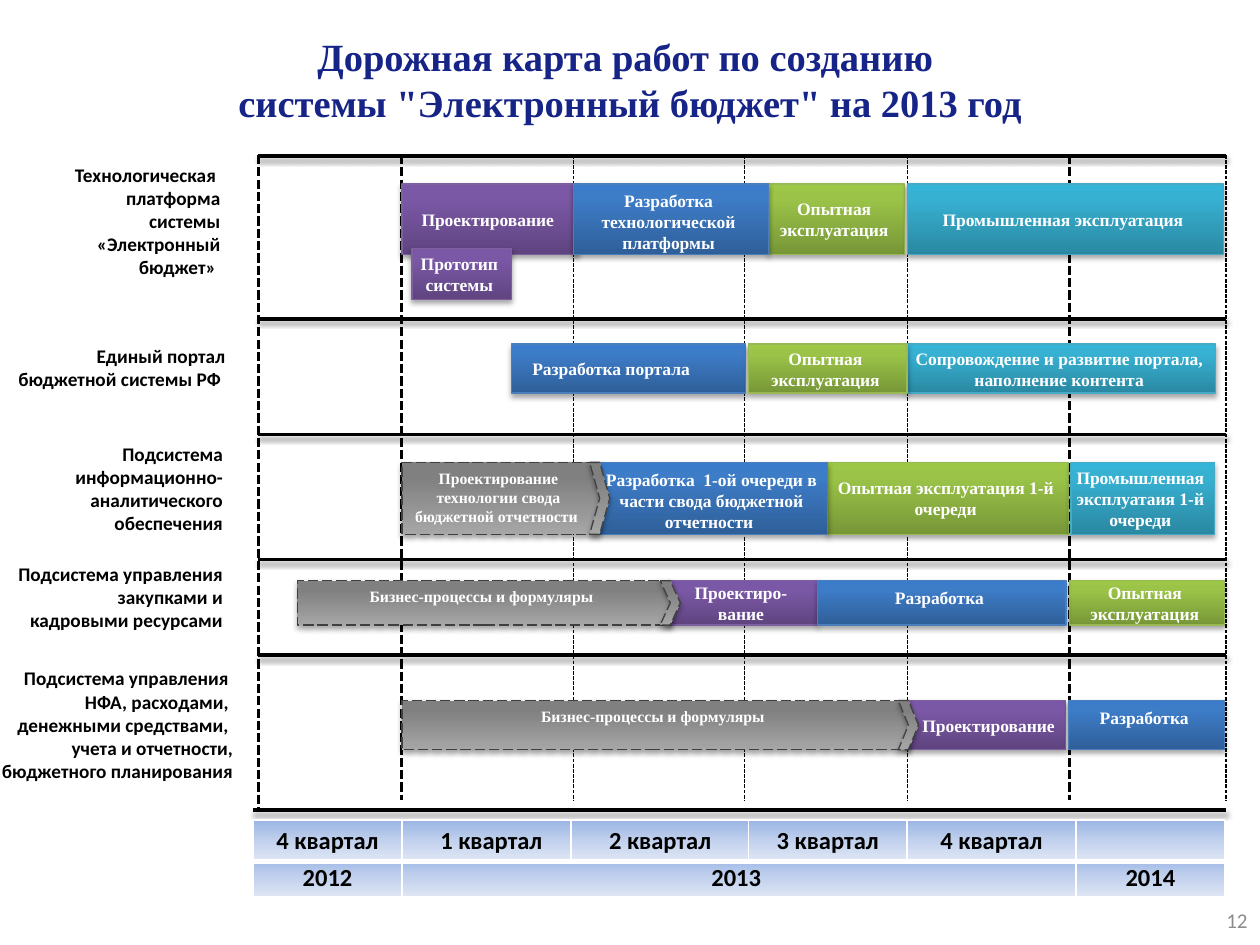
import pptx
import pptx.util
import pptx.oxml
import pptx.oxml.ns
import pptx.dml.color
import pptx.enum.dml
import pptx.enum.shapes
import pptx.enum.text

Inches, Pt = pptx.util.Inches, pptx.util.Pt
RGB = pptx.dml.color.RGBColor
Shape = pptx.enum.shapes.MSO_SHAPE
Dash = pptx.enum.dml.MSO_LINE
Align = pptx.enum.text.PP_ALIGN
Anchor = pptx.enum.text.MSO_ANCHOR
MID, TOP = Anchor.MIDDLE, Anchor.TOP
NS = pptx.oxml.ns.nsdecls("a")

BLACK, WHITE = RGB(0, 0, 0), RGB(255, 255, 255)
NAVY, GREY = RGB(0x16, 0x23, 0x87), RGB(0x8C, 0x8C, 0x8C)


def tint(text):
    return RGB.from_string(text)


# Bar kinds: gradient from bottom to top, then the outline
KINDS = {
    "plan": ((tint("5F4480"), tint("7B58A6"), tint("7C57A8")), tint("7D60A0")),
    "build": ((tint("2F5F99"), tint("3D7CC7"), tint("3A7CCB")), tint("4B7EBC")),
    "trial": ((tint("779737"), tint("9BC348"), tint("9DC746")), tint("98B955")),
    "live": ((tint("2A88A2"), tint("37B1D2"), tint("34B4D6")), tint("46AAC5")),
    "base": ((tint("A6A6A6"), tint("808080"), tint("808080")), tint("404040")),
}
CELL = (tint("9AB5E4"), tint("C2D1ED"), tint("E1E8F5"))

TITLE = {"name": "Times New Roman", "size": Pt(22), "bold": True}
LABEL = {"name": "Calibri", "size": Pt(11), "bold": True}
TASK = {"name": "Times New Roman", "size": Pt(10), "bold": True}
NOTE = {**TASK, "size": Pt(9)}
DATE = {**LABEL, "size": Pt(14)}
FOOT = {"name": "Calibri", "size": Pt(12), "bold": False}


def apply(item, vals):
    for key, val in vals.items():
        setattr(item, key, val)


def write(frame, lines, font, color, align, anchor=MID, pad=(0.04, 0.08)):
    apply(frame, {"word_wrap": True, "vertical_anchor": anchor,
                  "margin_left": Inches(pad[0]), "margin_right": Inches(pad[1])})
    for i, line in enumerate(lines):
        para = frame.paragraphs[0] if i == 0 else frame.add_paragraph()
        para.text = line
        para.alignment = align
        for run in para.runs:
            apply(run.font, font)
            run.font.color.rgb = color


def blend(props, hues, mid, angle):
    """Append a three-stop gradient fill."""
    stops = "".join(f'<a:gs pos="{pos * 1000}"><a:srgbClr val="{hue}"/></a:gs>'
                    for pos, hue in zip((0, mid, 100), hues))
    props.append(pptx.oxml.parse_xml(
        f'<a:gradFill {NS} rotWithShape="1"><a:gsLst>{stops}</a:gsLst>'
        f'<a:lin ang="{angle * 60000}" scaled="0"/></a:gradFill>'))


def shade(item, alpha=0, dist=0):
    """Append the effect list: a soft shadow below, or none."""
    glow = (f'<a:outerShdw blurRad="{Pt(3.1)}" dist="{Pt(dist)}" dir="5400000" rotWithShape="0">'
            f'<a:srgbClr val="000000"><a:alpha val="{alpha * 1000}"/></a:srgbClr>'
            '</a:outerShdw>') if alpha else ""
    item._element.spPr.append(pptx.oxml.parse_xml(f'<a:effectLst {NS}>{glow}</a:effectLst>'))


def rule(slide, x1, y1, x2, y2, width, dash=None, alpha=0):
    line = slide.shapes.add_connector(pptx.enum.shapes.MSO_CONNECTOR.STRAIGHT,
                                      *map(Inches, (x1, y1, x2, y2)))
    line.line.color.rgb = BLACK
    apply(line.line, {"width": Pt(width), "dash_style": dash})
    shade(line, alpha, 1.6)


def words(slide, box, lines, font, color, align, **opts):
    area = slide.shapes.add_textbox(*map(Inches, box))
    write(area.text_frame, lines, font, color, align, **opts)


def block(slide, box, kind, form=Shape.RECTANGLE):
    hues, edge = KINDS[kind]
    bar = slide.shapes.add_shape(form, *map(Inches, box))
    blend(bar._element.spPr, hues, 80, 270)
    bar.line.color.rgb = edge
    apply(bar.line, {"width": Pt(0.75), "dash_style": Dash.LONG_DASH if kind == "base" else None})
    shade(bar, 35, 1.8)
    return bar


def grid(slide, box):
    """Dashed quarter borders and solid lane borders."""
    x, y, w, h = box
    for dx, width in ((0, 1.75), (1.14, 1.75), (2.5, 0.75), (3.86, 0.75),
                      (5.15, 0.75), (6.44, 1.75), (w, 0.75)):
        end = y + h if dx == 0 else y + h - 0.08
        rule(slide, x + dx, y, x + dx, end, width, Dash.SQUARE_DOT)
    rule(slide, x + w - 0.08, y, x + 0.11, y, 0.75)
    for dy in (0.01, 1.3, 2.22, 3.21, 3.97):
        rule(slide, x + w, y + dy, x, y + dy, 2, alpha=38)
    rule(slide, x + w, y + h, x - 0.04, y + h, 2, alpha=38)


def lane(slide, box, label, lines, row, bars):
    """One lane: its label, then its bars (left, width, kind, text, options)."""
    left, top = box
    x, dy, w, h = label
    words(slide, (left + x, top + dy, w, h), lines, LABEL, BLACK, Align.RIGHT)
    dy, high = row
    for x, w, kind, text, opts in bars:
        opts = dict(opts)
        place = (left + x, top + opts.pop("dy", dy), w, opts.pop("high", high))
        bar = block(slide, place, kind)
        font = NOTE if kind == "base" else TASK
        write(bar.text_frame, [text], font, WHITE, Align.CENTER, **opts)
        if kind == "base":
            block(slide, (left + x + w - 0.08, top + dy, 0.16, high), kind, Shape.CHEVRON)


def axis(slide, box, cells):
    """A row of one-cell tables (left, width, text)."""
    left, top, high = box
    for x, w, text in cells:
        table = slide.shapes.add_table(1, 1, *map(Inches, (left + x, top, w, high))).table
        apply(table, {"first_row": False, "horz_banding": False})
        cell = table.cell(0, 0)
        apply(cell, dict.fromkeys(("margin_left", "margin_top", "margin_right", "margin_bottom"), 0))
        cell.vertical_anchor = MID
        props = cell._tc.get_or_add_tcPr()
        for side, width in zip("LRTB", (1, 1, 1, 3)):
            props.append(pptx.oxml.parse_xml(
                f'<a:ln{side} {NS} w="{Pt(width)}"><a:solidFill><a:srgbClr val="{WHITE}"/>'
                f'</a:solidFill></a:ln{side}>'))
        blend(props, CELL, 50, 90)
        if text:
            write(cell.text_frame, [text], DATE, BLACK, Align.CENTER, pad=(0, 0))


# Lanes: top, label box, label lines, bar row, bars
HIGH = {"anchor": TOP}
LANES = [
    (1.24, (0.33, 0, 1.5, 1.02),
     ["Технологическая ", "платформа", "системы «Электронный бюджет» "], (0.22, 0.56),
     [(3.19, 1.4, "plan", "Проектирование", {}),
      (6.1, 1.08, "trial", "Опытная эксплуатация", {}),
      (3.27, 0.79, "plan", "Прототип системы", {"dy": 0.73, "high": 0.41}),
      (4.55, 1.55, "build", "Разработка технологической платформы", HIGH),
      (7.2, 2.51, "live", "Промышленная эксплуатация", {})]),
    (2.53, (0.07, 0.18, 1.8, 0.41), ["Единый портал бюджетной системы РФ "], (0.2, 0.39),
     [(7.2, 2.45, "live", "Сопровождение и развитие портала, наполнение контента", {}),
      (4.06, 1.86, "build", "Разработка портала", {"pad": (0, 0.28)}),
      (5.94, 1.26, "trial", "Опытная эксплуатация", {})]),
    (3.45, (0.16, 0.22, 1.69, 0.41),
     ["Подсистема информационно-аналитического обеспечения"], (0.22, 0.57),
     [(6.57, 1.91, "trial", "Опытная эксплуатация 1-й очереди", {}),
      (4.76, 1.81, "build", "Разработка  1-ой очереди в части свода бюджетной отчетности ", HIGH),
      (8.5, 1.14, "live", "Промышленная эксплуатаия 1-й очереди", {}),
      (3.19, 1.57, "base", "Проектирование технологии свода бюджетной отчетности ", HIGH)]),
    (4.44, (-0.28, -0.06, 2.13, 0.71),
     ["Подсистема управления закупками и", "кадровыми ресурсами"], (0.17, 0.35),
     [(8.49, 1.23, "trial", "Опытная эксплуатация", {}),
      (5.31, 1.18, "plan", "Проектиро-вание", {}),
      (6.49, 1.97, "build", "Разработка", HIGH),
      (2.36, 2.96, "base", "Бизнес-процессы и формуляры", HIGH)]),
    (5.2, (-0.28, 0.05, 2.21, 1),
     ["Подсистема управления ", "НФА, расходами, ", "денежными средствами, ",
      "учета и отчетности, бюджетного планирования"], (0.36, 0.39),
     [(7.2, 1.26, "plan", "Проектирование", {"pad": (0.11, 0.08)}),
      (8.48, 1.24, "build", "Разработка", HIGH),
      (3.19, 4.02, "base", "Бизнес-процессы и формуляры", HIGH)]),
]
YEARS = [(1.18, 5.35, "2013 "), (0, 1.18, "2012"), (6.53, 1.18, "2014")]
TERMS = [(0, 1.18, "4 квартал"), (1.18, 1.42, "1 квартал"), (2.52, 1.42, "2 квартал"),
         (3.93, 1.26, "3 квартал"), (5.19, 1.34, "4 квартал"), (6.53, 1.18, "")]


def main():
    deck = pptx.Presentation()
    apply(deck, {"slide_width": Inches(10), "slide_height": Inches(7.5)})
    slide = deck.slides.add_slide(deck.slide_layouts[6])
    words(slide, (0, 0.35, 10, 0.55),
          ["Дорожная карта работ по созданию \vсистемы \"Электронный бюджет\" на 2013 год"],
          TITLE, NAVY, Align.CENTER, pad=(0.1, 0.1))
    grid(slide, (2.05, 1.23, 7.68, 5.2))
    for top, *parts in LANES:
        lane(slide, (0, top), *parts)
    axis(slide, (2.01, 6.8, 0.33), YEARS)
    axis(slide, (2.01, 6.51, 0.33), TERMS)
    words(slide, (9.36, 7.1, 0.64, 0.4), ["12"], FOOT, GREY, Align.RIGHT, pad=(0.1, 0.1))
    deck.save("out.pptx")


if __name__ == "__main__":
    main()
